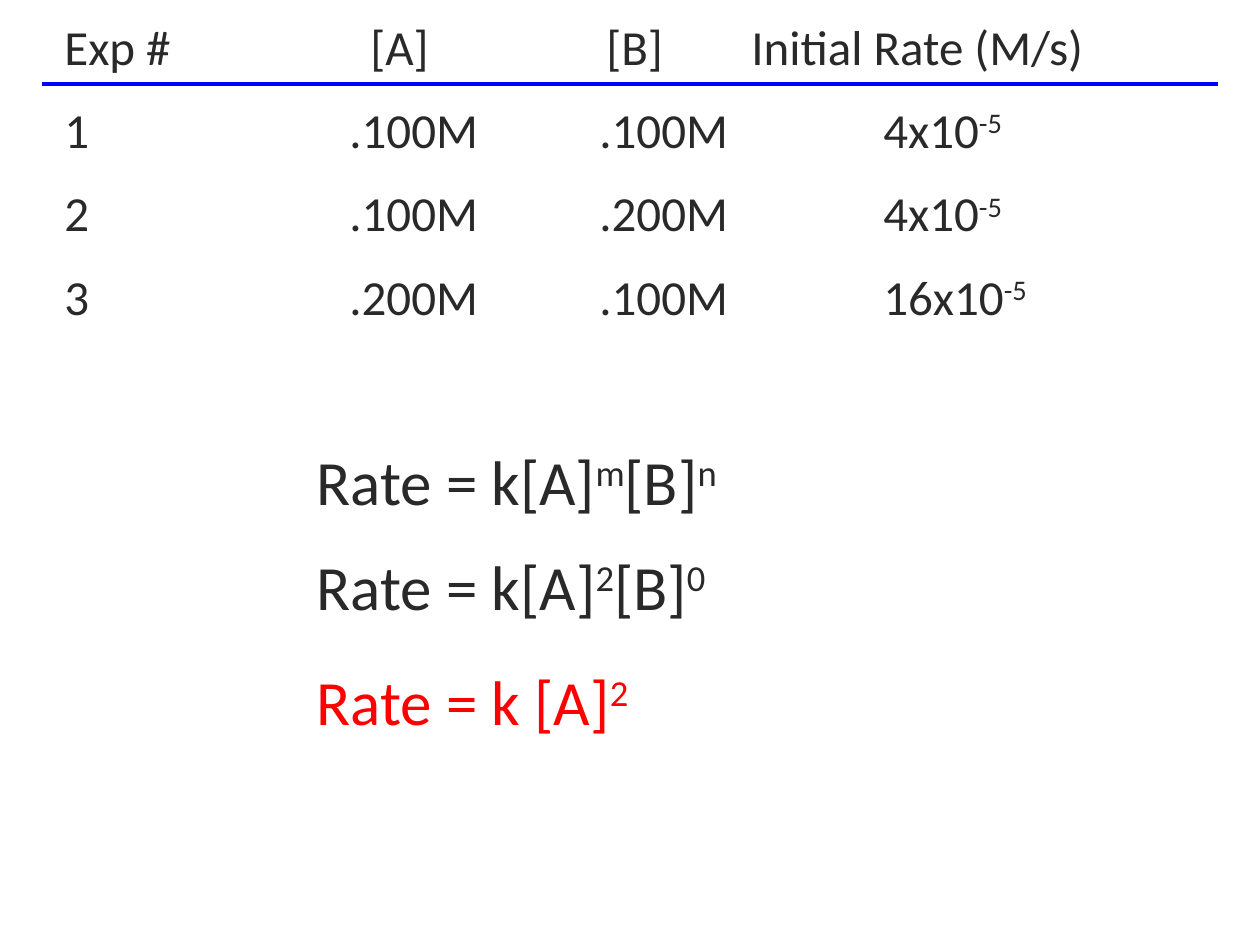
from dataclasses import dataclass

from lxml import etree
from pptx import Presentation
from pptx import util as u
from pptx.dml.color import RGBColor
from pptx.enum import shapes, text
from pptx.oxml.ns import qn

PX = u.Inches(1) // 126


@dataclass(frozen=True)
class Theme:
    font: str = "Calibri"
    panel: RGBColor = RGBColor(0xFF, 0xFF, 0xFF)
    ink: RGBColor = RGBColor(0x29, 0x29, 0x29)
    answer: RGBColor = RGBColor(0xFF, 0, 0)
    rule: RGBColor = RGBColor(0, 0, 0xFF)
    data_size: int = 28
    formula_size: int = 36


THEME = Theme()
HEADER = "Exp #\t[A]\t[B]\tInitial Rate (M/s)"
HEADER_TABS = (306, 542, 687)
TRIALS = (
    (".100M", ".100M", "4x10^-5"),
    (".100M", ".200M", "4x10^-5"),
    (".200M", ".100M", "16x10^-5"),
)
TRIAL_TABS = (285, 535, 819)
NUMBER_INDENT = 63
FORMULAS = (
    (436, 609, "Rate = k[A]^m^[B]^n", THEME.ink),
    (541, 536, "Rate = k[A]^2^[B]^0", THEME.ink),
    (656, 577, "Rate = k [A]^2", THEME.answer),
)


def add_panel(slide, left, top, width, height):
    sp = slide.shapes.add_shape(
        shapes.MSO_SHAPE.RECTANGLE, left * PX, top * PX, width * PX, height * PX)
    sp.shadow.inherit = False
    sp.fill.solid()
    sp.fill.fore_color.rgb = THEME.panel
    sp.line.fill.background()
    tf = sp.text_frame
    tf.word_wrap = True
    tf.vertical_anchor = text.MSO_ANCHOR.TOP
    return tf


def write(p, markup, size, color):
    """Fill a paragraph; every second part between carets is superscript."""
    p.alignment = text.PP_ALIGN.LEFT
    for i, part in enumerate(markup.split("^")):
        r = p.add_run()
        r.text = part
        r.font.name = THEME.font
        r.font.size = u.Pt(size)
        r.font.color.rgb = color
        if i % 2:
            r._r.get_or_add_rPr().set("baseline", "30000")


def set_tabs(p, stops):
    tabs = etree.SubElement(p._p.get_or_add_pPr(), qn("a:tabLst"))
    for stop in stops:
        etree.SubElement(tabs, qn("a:tab"), pos=str(stop * PX), algn="l")


def number(p):
    pPr = p._p.get_or_add_pPr()
    pPr.set("marL", str(NUMBER_INDENT * PX))
    pPr.set("indent", str(-NUMBER_INDENT * PX))
    etree.SubElement(pPr, qn("a:buFont"), typeface=THEME.font)
    etree.SubElement(pPr, qn("a:buAutoNum"), type="arabicPlain")


def add_trials(slide):
    tf = add_panel(slide, 52, 10, 1208, 339)
    header = tf.paragraphs[0]
    set_tabs(header, HEADER_TABS)
    write(header, HEADER, THEME.data_size, THEME.ink)
    for trial in TRIALS:
        p = tf.add_paragraph()
        p.space_before = u.Pt(14)
        number(p)
        set_tabs(p, TRIAL_TABS)
        write(p, "\t" + "\t".join(trial), THEME.data_size, THEME.ink)


def add_rule(slide, left, right, y):
    line = slide.shapes.add_connector(
        shapes.MSO_CONNECTOR.STRAIGHT, left * PX, y * PX, right * PX, y * PX)
    line.line.color.rgb = THEME.rule
    line.line.width = u.Pt(2)
    etree.SubElement(line._element.spPr, qn("a:effectLst"))


def add_formula(slide, top, width, markup, color):
    box = slide.shapes.add_textbox(304 * PX, top * PX, width * PX, 89 * PX)
    tf = box.text_frame
    tf.word_wrap = True
    write(tf.paragraphs[0], markup, THEME.formula_size, color)


def main():
    prs = Presentation()
    prs.slide_width, prs.slide_height = 1260 * PX, 945 * PX
    slide = prs.slides.add_slide(prs.slide_layouts[6])
    add_trials(slide)
    add_rule(slide, 42, 1218, 84)
    for formula in FORMULAS:
        add_formula(slide, *formula)
    prs.save("out.pptx")


if __name__ == "__main__":
    main()
